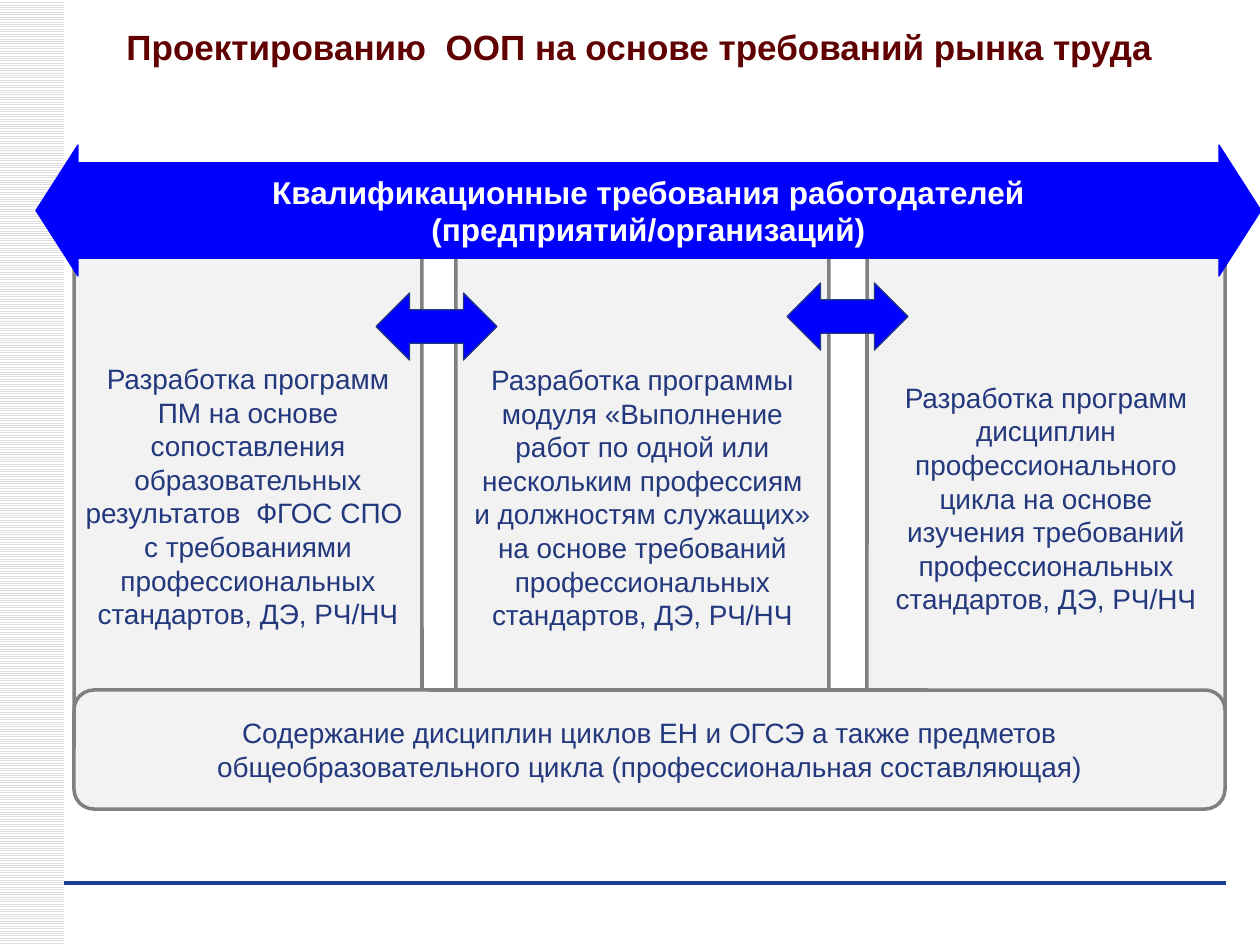
from lxml.etree import SubElement
from pptx import Presentation
from pptx.dml.color import RGBColor
from pptx.enum.dml import MSO_PATTERN
from pptx.enum.shapes import MSO_CONNECTOR, MSO_SHAPE
from pptx.enum.text import MSO_ANCHOR, PP_ALIGN
from pptx.oxml.ns import qn
from pptx.util import Emu, Pt

WIDTH, HEIGHT = 1260, 945
PX = 914400 / 126

BLUE, NAVY, MAROON, WHITE = "0000FF", "23387D", "600000", "FFFFFF"
PANEL, BORDER = "F2F2F2", "808080"

TITLE = "Проектированию  ООП на основе требований рынка труда"
DEMANDS = "Квалификационные требования работодателей (предприятий/организаций)"
FOUNDATION = ("Содержание дисциплин циклов ЕН и ОГСЭ а также предметов "
              "общеобразовательного цикла (профессиональная составляющая)")

# Each column: box (left, top, width, height) and its lines
COLUMNS = [
    ((74, 221, 348, 550), [
        "Разработка программ", "ПМ на основе", "сопоставления",
        "образовательных", "результатов  ФГОС СПО ", "с требованиями",
        "профессиональных", "стандартов, ДЭ, РЧ/НЧ"]),
    ((456, 224, 373, 546), [
        "Разработка программы", "модуля «Выполнение", "работ по одной или",
        "нескольким профессиям", "и должностям служащих»",
        "на основе требований", "профессиональных", "стандартов, ДЭ, РЧ/НЧ"]),
    ((867, 226, 358, 544), [
        "Разработка программ", "дисциплин", "профессионального",
        "цикла на основе", "изучения требований", "профессиональных",
        "стандартов, ДЭ, РЧ/НЧ"]),
]
LINK_POSITIONS = [(376, 293), (787, 283)]
LINK_SIZE = (121, 67)


def px(*lengths):
    return [Emu(round(length * PX)) for length in lengths]


def color(value):
    return RGBColor.from_string(value)


def write(shape, lines, size, font_color, bold=False, wrap=True):
    frame = shape.text_frame
    frame.word_wrap = wrap
    frame.vertical_anchor = MSO_ANCHOR.MIDDLE
    frame.text = "\n".join(lines)
    for paragraph in frame.paragraphs:
        paragraph.alignment = PP_ALIGN.CENTER
        font = paragraph.font
        font.name, font.size, font.bold = "Arial", Pt(size), bold
        font.color.rgb = color(font_color)


def add_block(slide, kind, box, fill, line, line_width, adjustments=()):
    shape = slide.shapes.add_shape(kind, *px(*box))
    shape.shadow.inherit = False
    shape.fill.solid()
    shape.fill.fore_color.rgb = color(fill)
    shape.line.color.rgb = color(line)
    shape.line.width = Pt(line_width)
    for index, value in enumerate(adjustments):
        shape.adjustments[index] = value
    return shape


def add_backdrop(slide):
    stripe = slide.shapes.add_shape(MSO_SHAPE.RECTANGLE, *px(0, 0, 64, HEIGHT))
    stripe.shadow.inherit = False
    stripe.line.fill.background()
    stripe.fill.patterned()
    stripe.fill.pattern = MSO_PATTERN.LIGHT_HORIZONTAL
    stripe.fill.fore_color.rgb = color("DDDDDD")
    stripe.fill.back_color.rgb = color(WHITE)

    rule = slide.shapes.add_connector(MSO_CONNECTOR.STRAIGHT, *px(64, 883, 1226, 883))
    rule.line.color.rgb = color("1A3D97")
    rule.line.width = Pt(0)
    SubElement(rule._element.spPr, qn("a:effectLst"))


def main():
    presentation = Presentation()
    presentation.slide_width, presentation.slide_height = px(WIDTH, HEIGHT)
    slide = presentation.slides.add_slide(presentation.slide_layouts[5])
    add_backdrop(slide)

    title = slide.shapes.title
    title.left, title.top, title.width, title.height = px(74, 0, 1131, 93)
    write(title, [TITLE], 20, MAROON, bold=True)

    for box, lines in COLUMNS:
        column = add_block(slide, MSO_SHAPE.ROUNDED_RECTANGLE, box,
                           PANEL, BORDER, 2, [0.09])
        write(column, lines, 16, NAVY, wrap=False)

    demands = add_block(slide, MSO_SHAPE.LEFT_RIGHT_ARROW, (36, 145, 1225, 131),
                        BLUE, BLUE, 0.75, [0.73, 0.32])
    write(demands, [DEMANDS], 18, WHITE, bold=True)

    for position in LINK_POSITIONS:
        add_block(slide, MSO_SHAPE.LEFT_RIGHT_ARROW, position + LINK_SIZE,
                  BLUE, NAVY, 0.75)

    foundation = add_block(slide, MSO_SHAPE.ROUNDED_RECTANGLE, (74, 690, 1151, 119),
                           PANEL, BORDER, 2)
    write(foundation, [FOUNDATION], 16, NAVY)

    presentation.save("out.pptx")


if __name__ == "__main__":
    main()
